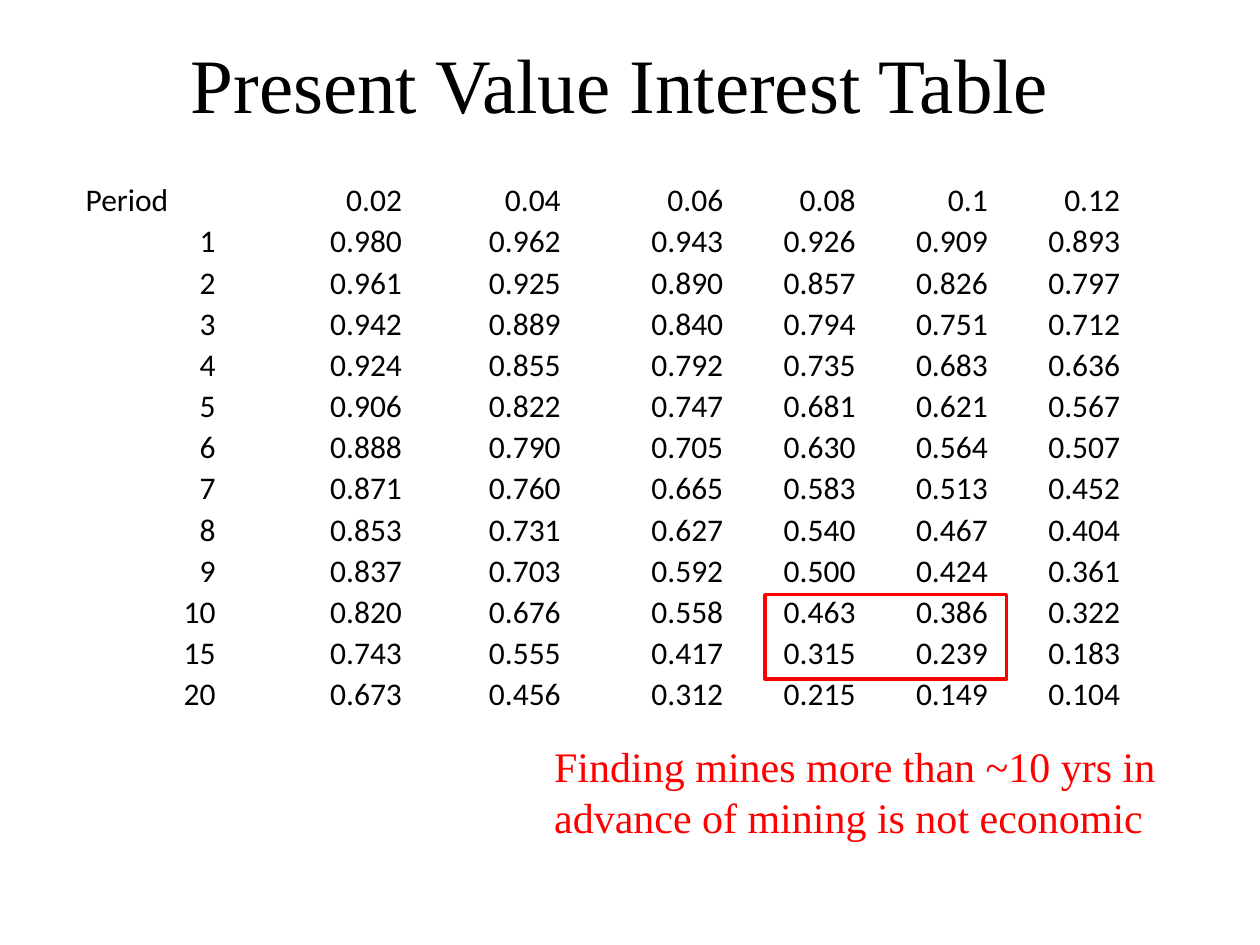
from pptx import Presentation
from pptx.dml.color import RGBColor
from pptx.enum.shapes import MSO_SHAPE as Shape
from pptx.enum.text import MSO_ANCHOR as Anchor, PP_ALIGN as Align
from pptx.util import Inches, Pt

COLORS = {"text": "000000", "accent": "FF0000"}
FORMATS = {
    "title": {"name": "Times New Roman", "size": Pt(44)},
    "table": {"name": "Calibri", "size": Pt(18)},
    "note": {"name": "Times New Roman", "size": Pt(24)},
}
CELL = {
    "margin_left": Inches(0.01),
    "margin_right": Inches(0.01),
    "margin_top": Inches(0.01),
    "margin_bottom": 0,
    "vertical_anchor": Anchor.BOTTOM,
}
RATES = [0.02, 0.04, 0.06, 0.08, 0.1, 0.12]
PERIODS = [*range(1, 11), 15, 20]
COLUMN_WIDTHS = [1.05, 1.48, 1.26, 1.29, 1.05, 1.05, 1.05]
TABLE_HEIGHT = 4.25


def set_attributes(target, values):
    """Set every named attribute on the target."""
    for name, value in values.items():
        setattr(target, name, value)


def write_text(frame, text, style, color, align):
    """Write one formatted paragraph into a text frame."""
    para = frame.paragraphs[0]
    para.alignment = align
    span = para.add_run()
    span.text = text
    set_attributes(span.font, FORMATS[style])
    span.font.color.rgb = RGBColor.from_string(COLORS[color])


def add_text(page, area, text, style, color="text", align=Align.LEFT, anchor=Anchor.TOP):
    """Add a wrapping text box."""
    frame = page.shapes.add_textbox(*map(Inches, area)).text_frame
    frame.word_wrap = True
    frame.vertical_anchor = anchor
    write_text(frame, text, style, color, align)


def present_value_rows():
    """Return the header and the discount factors for each period."""
    header = ["Period", *map(str, RATES)]
    body = [
        [str(period), *(f"{(1 + rate) ** -period:.3f}" for rate in RATES)]
        for period in PERIODS
    ]
    return [header, *body]


def add_value_table(page, left, top, rows):
    """Add the plain table of present values."""
    area = (left, top, sum(COLUMN_WIDTHS), TABLE_HEIGHT)
    table = page.shapes.add_table(len(rows), len(COLUMN_WIDTHS), *map(Inches, area)).table
    set_attributes(table, {"first_row": False, "horz_banding": False})
    for column, width in zip(table.columns, COLUMN_WIDTHS):
        column.width = Inches(width)
    for row, values in zip(table.rows, rows):
        row.height = Inches(TABLE_HEIGHT / len(rows))
        for cell, value in zip(row.cells, values):
            set_attributes(cell, CELL)
            cell.fill.background()
            align = Align.LEFT if value == "Period" else Align.RIGHT
            write_text(cell.text_frame, value, "table", "text", align)


def add_highlight(page, area):
    """Outline the values that the note is about."""
    box = page.shapes.add_shape(Shape.RECTANGLE, *map(Inches, area))
    box.shadow.inherit = False
    box.fill.background()
    box.line.color.rgb = RGBColor.from_string(COLORS["accent"])
    box.line.width = Pt(2)


def main():
    """Build and save the slide."""
    deck = Presentation()
    set_attributes(deck, {"slide_width": Inches(10), "slide_height": Inches(7.5)})
    page = deck.slides.add_slide(deck.slide_layouts[6])
    add_text(page, (0.67, 0.03, 8.5, 1.25), "Present Value Interest Table",
             "title", align=Align.CENTER, anchor=Anchor.MIDDLE)
    add_value_table(page, 0.67, 1.42, present_value_rows())
    add_highlight(page, (6.07, 4.72, 1.92, 0.67))
    add_text(page, (4.3, 5.83, 5.46, 0.91),
             "Finding mines more than ~10 yrs in advance of mining is not economic",
             "note", "accent")
    deck.save("out.pptx")


if __name__ == "__main__":
    main()
